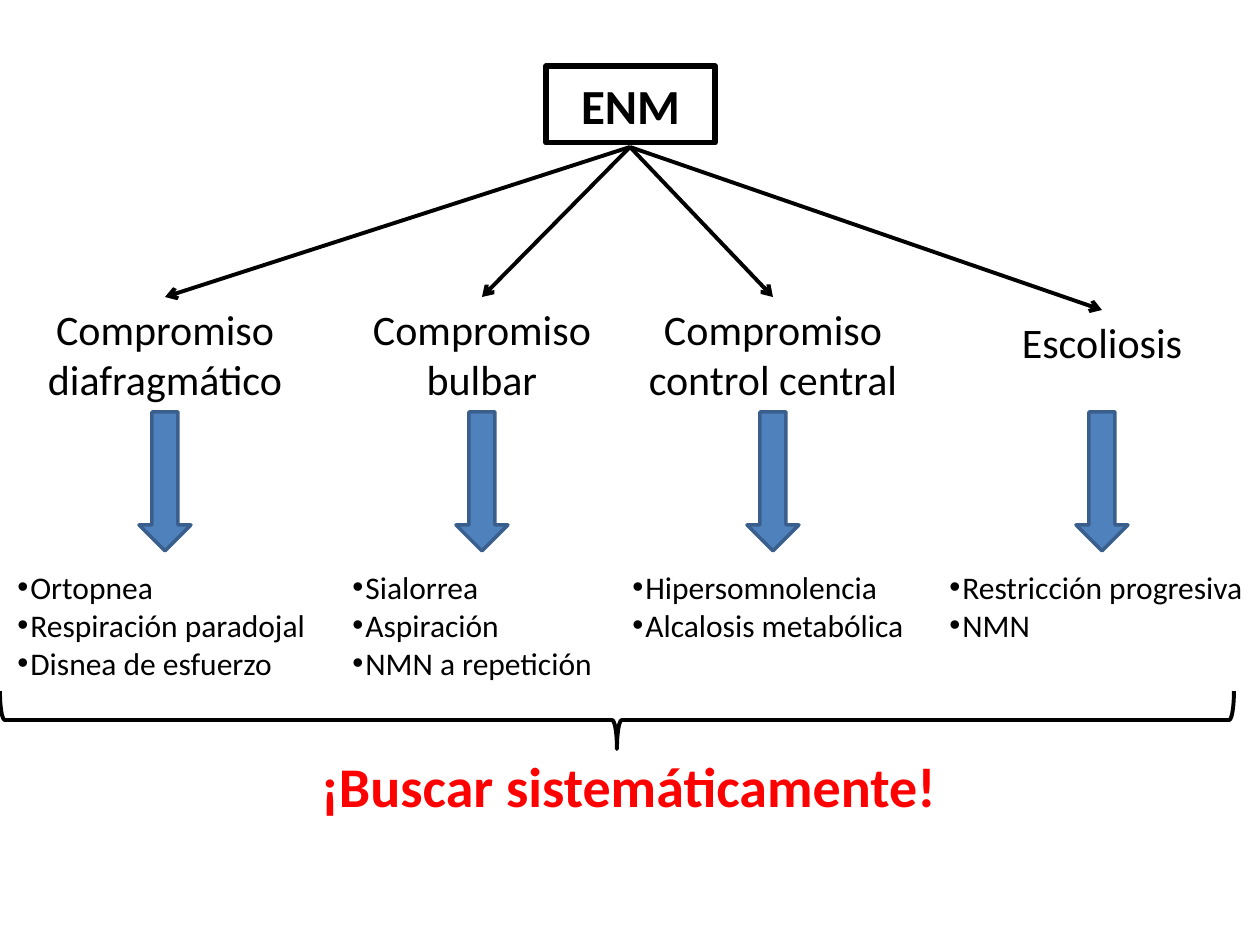
from dataclasses import dataclass

from lxml import etree
from pptx import Presentation
from pptx.dml.color import RGBColor
from pptx.enum.shapes import MSO_CONNECTOR, MSO_SHAPE
from pptx.enum.text import MSO_ANCHOR, PP_ALIGN
from pptx.oxml.ns import qn
from pptx.util import Pt

PX = 914400 / 126


@dataclass(frozen=True)
class Theme:
    font: str = "Calibri"
    ink: str = "000000"
    alert: str = "FF0000"
    arrow_fill: str = "4F81BD"
    arrow_line: str = "3A5F8C"
    root_size: int = 28
    heading_size: int = 24
    list_size: int = 18
    alert_size: int = 32


THEME = Theme()

ROOT = "ENM"
CONCLUSION = "¡Buscar sistemáticamente!"
# centre x, heading, heading (top, width, height), findings, list (left, width)
BRANCHES = [
    (165, "Compromiso diafragmático", (297, 268, 113),
     ["Ortopnea", "Respiración paradojal", "Disnea de esfuerzo"], (5, 321)),
    (482, "Compromiso bulbar", (297, 253, 113),
     ["Sialorrea", "Aspiración", "NMN a repetición"], (340, 285)),
    (773, "Compromiso control central", (297, 315, 113),
     ["Hipersomnolencia", "Alcalosis metabólica"], (620, 306)),
    (1102, "Escoliosis", (310, 272, 63),
     ["Restricción progresiva", "NMN"], (937, 330)),
]

ROOT_BOX = (546, 66, 169, 77)
FAN_START = (630, 147)
ARROW_TOP, ARROW_W, ARROW_H = 412, 52, 139
LIST_TOP, LIST_LINE, LIST_PAD = 562, 38, 12
BULLET_INDENT = 13
BRACE_BOX = (0, 691, 1234, 58)
CONCLUSION_BOX = (301, 745, 655, 79)


def px(*values):
    return [round(v * PX) for v in values]


def write(sp, lines, size, color=THEME.ink, bold=False, align=PP_ALIGN.CENTER):
    tf = sp.text_frame
    tf.word_wrap = True
    tf.text = "\n".join(lines)
    for p in tf.paragraphs:
        p.alignment = align
        for r in p.runs:
            r.font.name, r.font.size, r.font.bold = THEME.font, Pt(size), bold
            r.font.color.rgb = RGBColor.from_string(color)


def add_text(s, box, lines, size, **style):
    sp = s.shapes.add_textbox(*px(*box))
    write(sp, lines, size, **style)
    return sp


def add_shape(s, kind, box, line, width, fill=None):
    sp = s.shapes.add_shape(kind, *px(*box))
    sp.shadow.inherit = False
    if fill:
        sp.fill.solid()
        sp.fill.fore_color.rgb = RGBColor.from_string(fill)
    else:
        sp.fill.background()
    sp.line.color.rgb = RGBColor.from_string(line)
    sp.line.width = Pt(width)
    return sp


def add_bullets(sp):
    for p in sp.text_frame.paragraphs:
        pPr = p._p.get_or_add_pPr()
        indent, = px(BULLET_INDENT)
        pPr.set("marL", str(indent))
        pPr.set("indent", str(-indent))
        etree.SubElement(pPr, qn("a:buFont"), typeface="Arial")
        etree.SubElement(pPr, qn("a:buChar"), char="•")


def add_branch_line(s, heading):
    line = s.shapes.add_connector(MSO_CONNECTOR.STRAIGHT, *px(*FAN_START, *FAN_START))
    line.end_connect(heading, 0)
    line.line.color.rgb = RGBColor.from_string(THEME.ink)
    line.line.width = Pt(2.25)
    etree.SubElement(line.line._get_or_add_ln(), qn("a:tailEnd"), type="arrow")
    etree.SubElement(line._element.spPr, qn("a:effectLst"))


def add_branch(s, center, title, heading_box, findings, list_span):
    top, width, height = heading_box
    heading = add_text(s, (center - width / 2, top, width, height),
                       [title], THEME.heading_size)
    left, list_width = list_span
    list_height = LIST_LINE * len(findings) + LIST_PAD
    add_bullets(add_text(s, (left, LIST_TOP, list_width, list_height), findings,
                         THEME.list_size, align=PP_ALIGN.LEFT))
    add_shape(s, MSO_SHAPE.DOWN_ARROW,
              (center - ARROW_W / 2, ARROW_TOP, ARROW_W, ARROW_H),
              THEME.arrow_line, 2, THEME.arrow_fill)
    add_branch_line(s, heading)


def add_brace(s):
    """A left brace turned a quarter so that it points down."""
    left, top, width, height = BRACE_BOX
    upright = (left + (width - height) / 2, top + (height - width) / 2, height, width)
    brace = add_shape(s, MSO_SHAPE.LEFT_BRACE, upright, THEME.ink, 2.25)
    brace.rotation = 270


def main():
    prs = Presentation()
    prs.slide_width, prs.slide_height = px(1260, 945)
    s = prs.slides.add_slide(prs.slide_layouts[6])

    root = add_shape(s, MSO_SHAPE.RECTANGLE, ROOT_BOX, THEME.ink, 3)
    write(root, [ROOT], THEME.root_size, bold=True)
    root.text_frame.vertical_anchor = MSO_ANCHOR.MIDDLE
    for branch in BRANCHES:
        add_branch(s, *branch)
    add_brace(s)
    add_text(s, CONCLUSION_BOX, [CONCLUSION], THEME.alert_size,
             color=THEME.alert, bold=True)
    prs.save("out.pptx")


if __name__ == "__main__":
    main()
